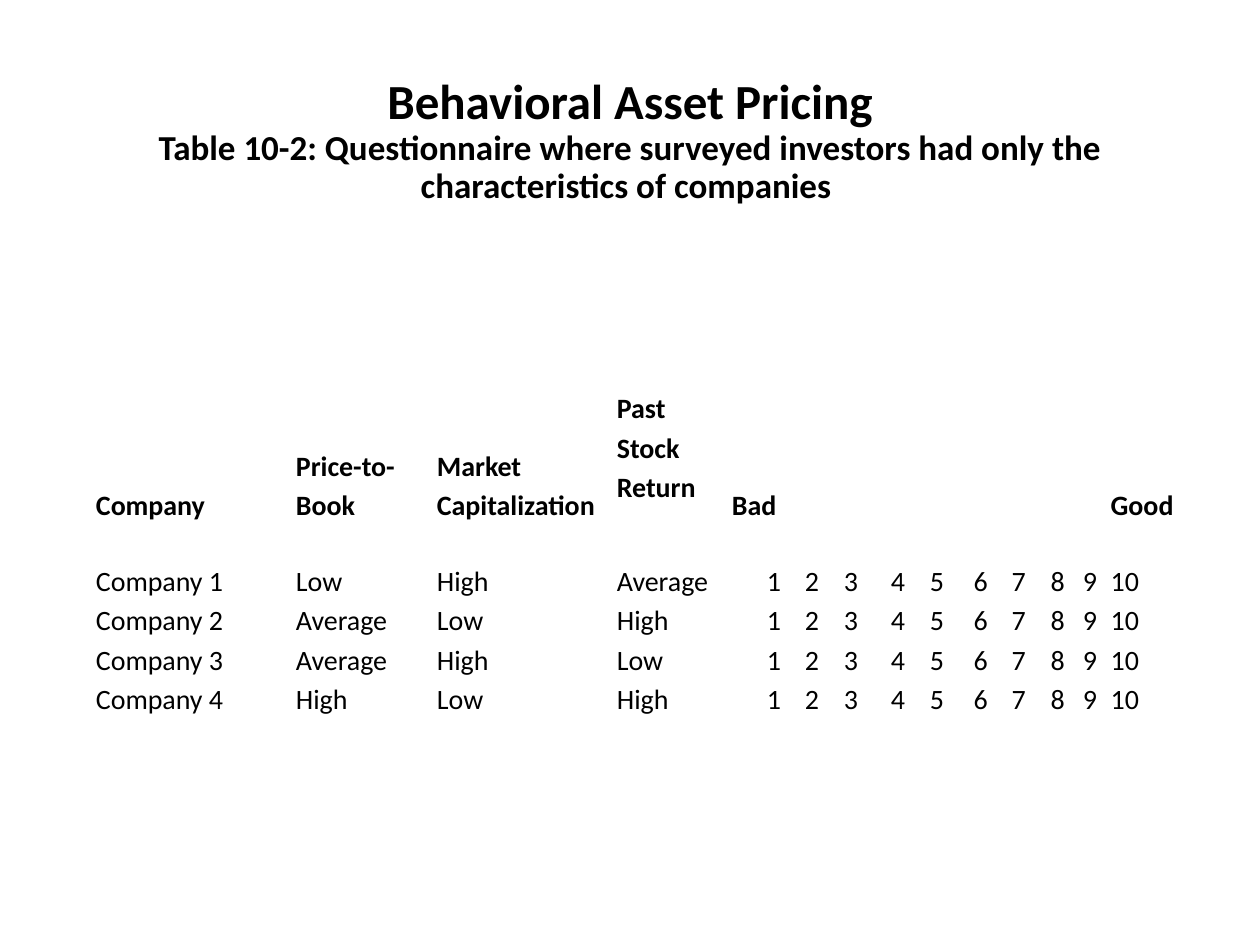
from pptx import Presentation
from pptx.dml.color import RGBColor
from pptx.enum.text import MSO_ANCHOR as ANCHOR, MSO_AUTO_SIZE as AUTO, PP_ALIGN as ALIGN
from pptx.util import Pt

PX = 914400 // 126
BLACK = RGBColor(0, 0, 0)
FONT = "Calibri"

TITLE = "Behavioral Asset Pricing"
SUBTITLE = ("Table 10-2: Questionnaire where surveyed investors had only "
            "the characteristics of companies ")
HEADERS = {0: "Company", 1: "Price-to-Book", 2: "Market Capitalization",
           3: "Past Stock Return", 4: "Bad", 13: "Good"}
COMPANIES = [
    ("Company 1", "Low", "High", "Average"),
    ("Company 2", "Average", "Low", "High"),
    ("Company 3", "Average", "High", "Low"),
    ("Company 4", "High", "Low", "High"),
]
RATINGS = range(1, 11)

TITLE_BOX = (87, 50, 1086, 183)
TABLE_LEFT, TABLE_TOP = 87, 291
COL_WIDTHS = [200, 141, 180, 115, 67, 38, 39, 47, 39, 44, 38, 39, 28, 92]
ROW_HEIGHTS = [39, 39, 154, 76, 37, 37, 37, 37]
HEADER_ROW, FIRST_COMPANY_ROW = 2, 3
RETURN_COL, FIRST_RATING_COL, LAST_RATING_COL = 3, 4, 13


def add_run(p, text, size, bold):
    r = p.add_run()
    r.text = text
    for name, value in dict(name=FONT, size=Pt(size), bold=bold).items():
        setattr(r.font, name, value)
    r.font.color.rgb = BLACK


def fill_cell(cell, text, bold=False, align=ALIGN.LEFT, anchor=ANCHOR.BOTTOM):
    cell.vertical_anchor = anchor
    p = cell.text_frame.paragraphs[0]
    p.alignment = align
    p.line_spacing = 1.15
    add_run(p, text, 16, bold)


def add_title(slide):
    sp = slide.shapes.title
    sp.left, sp.top, sp.width, sp.height = (v * PX for v in TITLE_BOX)
    tf = sp.text_frame
    tf.word_wrap = True
    tf.auto_size = AUTO.NONE
    tf.vertical_anchor = ANCHOR.MIDDLE
    p = tf.paragraphs[0]
    p.alignment = ALIGN.CENTER
    p.line_spacing = 0.9
    add_run(p, TITLE, 28, True)
    p.add_line_break()
    add_run(p, SUBTITLE, 20, True)


def add_questionnaire(slide):
    table = slide.shapes.add_table(
        len(ROW_HEIGHTS), len(COL_WIDTHS), TABLE_LEFT * PX, TABLE_TOP * PX,
        sum(COL_WIDTHS) * PX, sum(ROW_HEIGHTS) * PX).table
    table.first_row = table.horz_banding = False
    for col, width in zip(table.columns, COL_WIDTHS):
        col.width = width * PX
    for row, height in zip(table.rows, ROW_HEIGHTS):
        row.height = height * PX
    for cell in table.iter_cells():
        cell.fill.background()
        cell.margin_left = cell.margin_right = 9 * PX
        cell.margin_top = cell.margin_bottom = 0

    for c, text in HEADERS.items():
        anchor = ANCHOR.MIDDLE if c == RETURN_COL else ANCHOR.BOTTOM
        fill_cell(table.cell(HEADER_ROW, c), text, bold=True, anchor=anchor)
    for r, company in enumerate(COMPANIES, FIRST_COMPANY_ROW):
        for c, value in enumerate([*company, *RATINGS]):
            right = FIRST_RATING_COL <= c < LAST_RATING_COL
            fill_cell(table.cell(r, c), str(value),
                      align=ALIGN.RIGHT if right else ALIGN.LEFT)


def main():
    prs = Presentation()
    prs.slide_width, prs.slide_height = 1260 * PX, 945 * PX
    slide = prs.slides.add_slide(prs.slide_layouts[5])
    add_title(slide)
    add_questionnaire(slide)
    prs.save("out.pptx")


if __name__ == "__main__":
    main()
